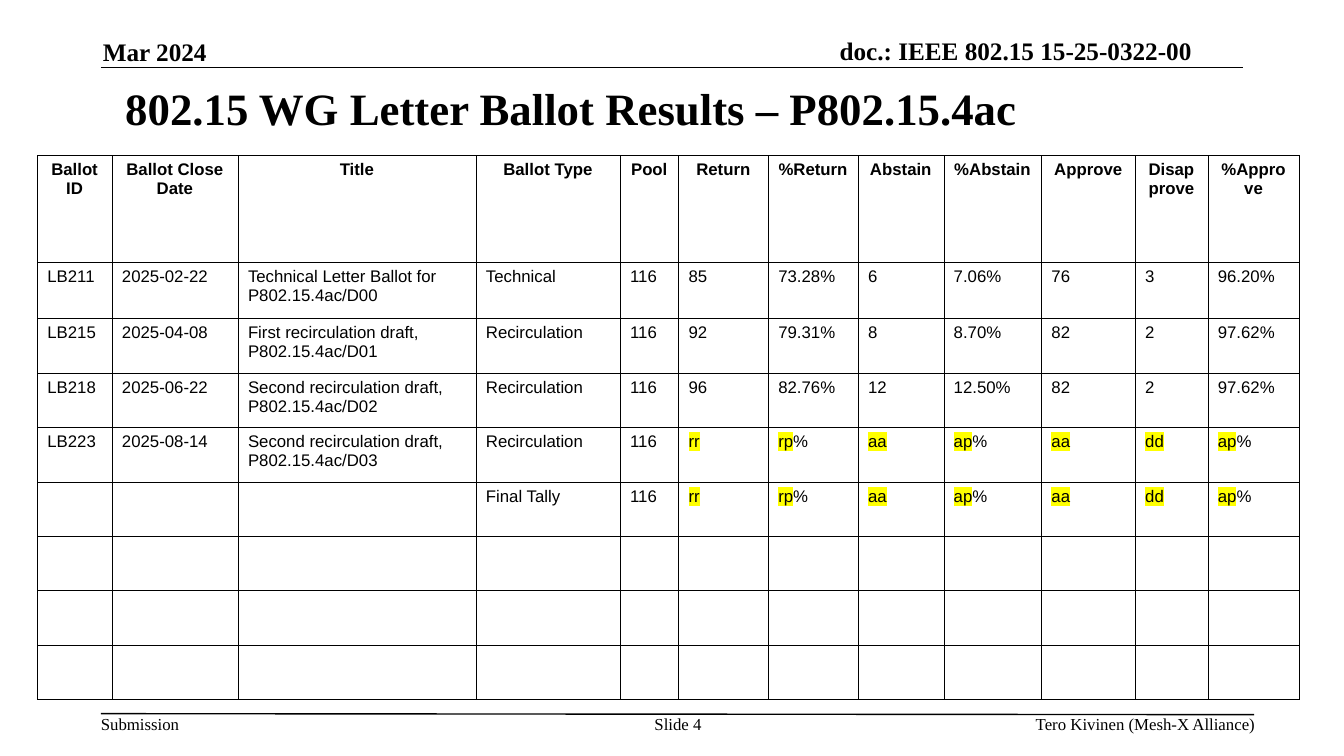
"""Build the letter ballot results slide with its header, footer and table."""
from dataclasses import dataclass
from typing import Any

import lxml.etree
import pptx
import pptx.dml.color
import pptx.enum.text
import pptx.oxml.ns
import pptx.util

Inches = pptx.util.Inches
Align = pptx.enum.text.PP_ALIGN
Anchor = pptx.enum.text.MSO_ANCHOR


@dataclass(frozen=True)
class Theme:
    ink: str = "000000"
    marker: str = "FFFF00"
    serif: str = "Times New Roman"
    sans: str = "Arial"
    title_size: int = 32
    header_size: int = 18
    small_size: int = 12
    rule_width: float = 1
    border_width: float = 0.06


@dataclass(frozen=True)
class Label:
    text: str
    left: float
    top: float
    width: float
    height: float
    size: int
    bold: bool = False
    align: Any = Align.LEFT
    anchor: Any = Anchor.TOP
    wrap: bool = True


@dataclass(frozen=True)
class Rule:
    left: float
    top: float
    right: float
    bottom: float


@dataclass(frozen=True)
class Column:
    heading: str
    width: float


THEME = Theme()
TITLE = Label("802.15 WG Letter Ballot Results – P802.15.4ac", 0, 0.75, 11.33, 0.63,
              THEME.title_size, True, Align.CENTER, Anchor.MIDDLE)
LABELS = [
    Label("Submission", 1, 7.08, 0.78, 0.2, THEME.small_size, wrap=False),
    Label("doc.: IEEE 802.15 15-25-0322-00", 6.72, 0.35, 5.1, 0.3,
          THEME.header_size, True, Align.RIGHT, Anchor.BOTTOM),
    Label("Mar 2024", 1.02, 0.36, 2.73, 0.3, THEME.header_size, True, anchor=Anchor.BOTTOM),
    Label("Tero Kivinen (Mesh-X Alliance)", 7.81, 7.08, 4.64, 0.19,
          THEME.small_size, align=Align.RIGHT),
    Label("Slide 4", 6.34, 7.08, 0.77, 0.39, THEME.small_size, align=Align.CENTER),
]
RULES = [Rule(1, 0.67, 12.33, 0.67), Rule(1, 7.08, 12.44, 7.09)]
COLUMNS = [
    Column("Ballot ID", 0.74), Column("Ballot Close Date", 1.25), Column("Title", 2.36),
    Column("Ballot Type", 1.43), Column("Pool", 0.58), Column("Return", 0.89),
    Column("%Return", 0.89), Column("Abstain", 0.85), Column("%Abstain", 0.97),
    Column("Approve", 0.93), Column("Disapprove", 0.72), Column("%Approve", 0.91),
]
ROW_HEIGHTS = [1.06, 0.56] + [0.54] * 7
MARK = "*"
PENDING = ["116", "*rr*", "*rp*%", "*aa*", "*ap*%", "*aa*", "*dd*", "*ap*%"]
BALLOTS = [
    ["LB211", "2025-02-22", "Technical Letter Ballot for P802.15.4ac/D00", "Technical",
     "116", "85", "73.28%", "6", "7.06%", "76", "3", "96.20%"],
    ["LB215", "2025-04-08", "First recirculation draft, P802.15.4ac/D01", "Recirculation",
     "116", "92", "79.31%", "8", "8.70%", "82", "2", "97.62%"],
    ["LB218", "2025-06-22", "Second recirculation draft, P802.15.4ac/D02", "Recirculation",
     "116", "96", "82.76%", "12", "12.50%", "82", "2", "97.62%"],
    ["LB223", "2025-08-14", "Second recirculation draft, P802.15.4ac/D03", "Recirculation",
     *PENDING],
    ["", "", "", "Final Tally", *PENDING],
]


def color(value: str) -> pptx.dml.color.RGBColor:
    """Turn a hex value into a colour."""
    return pptx.dml.color.RGBColor.from_string(value)


def add_child(parent: Any, tag: str, **attributes: str) -> Any:
    """Append a drawing element."""
    return lxml.etree.SubElement(parent, pptx.oxml.ns.qn(tag), attributes)


def add_span(para: Any, text: str, font: str, size: int, bold: bool) -> Any:
    """Add formatted text to a paragraph."""
    span = para.add_run()
    span.text = text
    formats = {"size": pptx.util.Pt(size), "bold": bold, "name": font}
    for name, value in formats.items():
        setattr(span.font, name, value)
    span.font.color.rgb = color(THEME.ink)
    return span


def highlight(span: Any) -> None:
    """Put the marker colour behind a span."""
    properties = span.font._element
    marker = add_child(properties, "a:highlight")
    add_child(marker, "a:srgbClr", val=THEME.marker)
    properties.find(pptx.oxml.ns.qn("a:latin")).addprevious(marker)


def fill_label(box: Any, label: Label, margins: tuple[float, float]) -> None:
    """Place a box and write its label."""
    for name in ("left", "top", "width", "height"):
        setattr(box, name, Inches(getattr(label, name)))
    side, edge = (Inches(margin) for margin in margins)
    formats = {
        "margin_left": side, "margin_right": side, "margin_top": edge, "margin_bottom": edge,
        "word_wrap": label.wrap, "vertical_anchor": label.anchor,
        "auto_size": pptx.enum.text.MSO_AUTO_SIZE.NONE,
    }
    for name, value in formats.items():
        setattr(box.text_frame, name, value)
    para = box.text_frame.paragraphs[0]
    para.alignment = label.align
    add_span(para, label.text, THEME.serif, label.size, label.bold)


def add_rule(page: Any, rule: Rule) -> None:
    """Draw a straight rule."""
    line = page.shapes.add_connector(
        pptx.enum.shapes.MSO_CONNECTOR.STRAIGHT, Inches(rule.left), Inches(rule.top),
        Inches(rule.right), Inches(rule.bottom))
    line.line.color.rgb = color(THEME.ink)
    line.line.width = pptx.util.Pt(THEME.rule_width)
    add_child(line._element.spPr, "a:effectLst")


def format_cell(cell: Any, text: str, heading: bool) -> None:
    """Border a cell and write its text, marking the starred parts."""
    properties = cell._tc.get_or_add_tcPr()
    for side in ("a:lnL", "a:lnR", "a:lnT", "a:lnB"):
        border = add_child(properties, side, w=str(pptx.util.Pt(THEME.border_width)))
        add_child(add_child(border, "a:solidFill"), "a:srgbClr", val=THEME.ink)
    cell.fill.background()
    para = cell.text_frame.paragraphs[0]
    para.alignment = Align.CENTER if heading else Align.LEFT
    for index, part in enumerate(text.split(MARK)):
        if part:
            span = add_span(para, part, THEME.sans, THEME.small_size, heading)
            if index % 2:
                highlight(span)


def add_ballot_table(page: Any) -> None:
    """Add the table of ballots."""
    width = sum(column.width for column in COLUMNS)
    frame = page.shapes.add_table(
        len(ROW_HEIGHTS), len(COLUMNS), Inches(0.37), Inches(1.54),
        Inches(width), Inches(sum(ROW_HEIGHTS)))
    table = frame.table
    table.first_row = table.horz_banding = False
    for target, column in zip(table.columns, COLUMNS):
        target.width = Inches(column.width)
    rows = [[column.heading for column in COLUMNS], *BALLOTS]
    rows += [[""] * len(COLUMNS)] * (len(ROW_HEIGHTS) - len(rows))
    for index, (row, height, texts) in enumerate(zip(table.rows, ROW_HEIGHTS, rows)):
        row.height = Inches(height)
        for cell, text in zip(row.cells, texts):
            format_cell(cell, text, index == 0)


def main() -> None:
    """Build and save the deck."""
    deck = pptx.Presentation()
    deck.slide_width, deck.slide_height = Inches(13.33), Inches(7.5)
    page = deck.slides.add_slide(deck.slide_layouts.get_by_name("Title Only"))
    for rule in RULES:
        add_rule(page, rule)
    for label in LABELS:
        fill_label(page.shapes.add_textbox(0, 0, 0, 0), label, (0, 0))
    fill_label(page.shapes.title, TITLE, (0.1, 0.05))
    add_ballot_table(page)
    deck.save("out.pptx")


if __name__ == "__main__":
    main()
